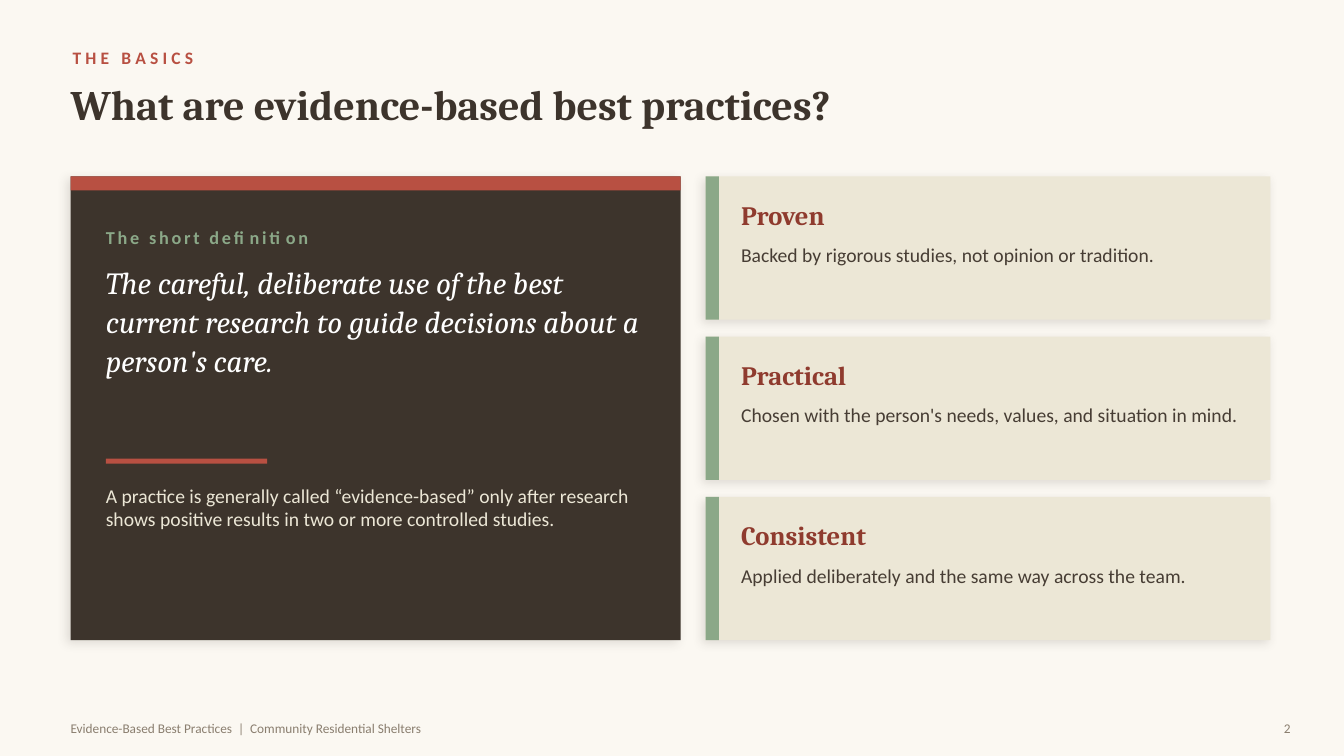
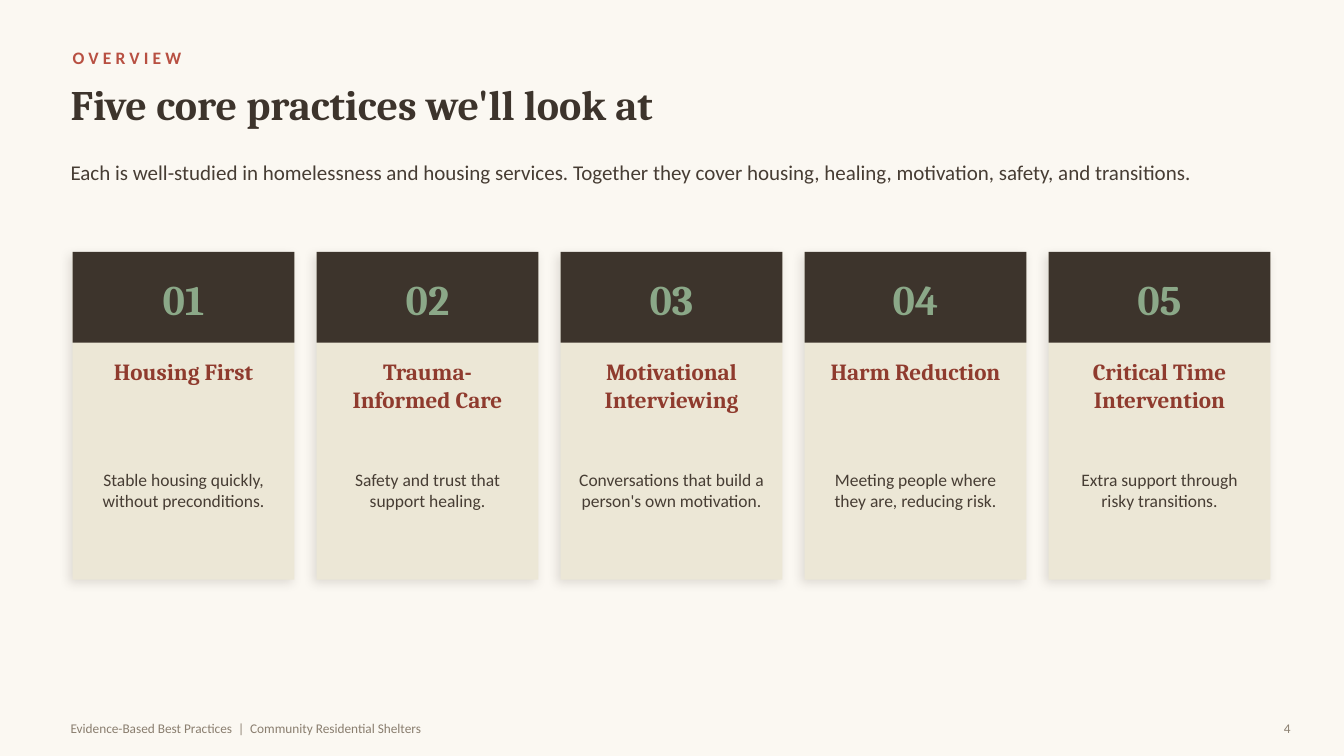
from lxml import etree
from pptx import Presentation
from pptx.dml.color import RGBColor
from pptx.enum.shapes import MSO_SHAPE
from pptx.enum.text import MSO_ANCHOR, MSO_AUTO_SIZE, PP_ALIGN
from pptx.oxml.ns import qn
from pptx.util import Pt

RECTANGLE = MSO_SHAPE.RECTANGLE
TOP, MIDDLE = MSO_ANCHOR.TOP, MSO_ANCHOR.MIDDLE
LEFT, CENTER, RIGHT = PP_ALIGN.LEFT, PP_ALIGN.CENTER, PP_ALIGN.RIGHT
NO_AUTOFIT = MSO_AUTO_SIZE.NONE

EMU_PER_PX = 9144  # 100 px to the inch
TITLE_ONLY = 5

PAPER = RGBColor(0xFB, 0xF8, 0xF2)
SAND = RGBColor(0xEC, 0xE7, 0xD6)
BARK = RGBColor(0x3D, 0x34, 0x2C)
BODY = RGBColor(0x47, 0x3D, 0x34)
CLAY = RGBColor(0xB8, 0x50, 0x42)
BRICK = RGBColor(0x8F, 0x3B, 0x2E)
SAGE = RGBColor(0x8B, 0xA8, 0x88)
MUTED = RGBColor(0x8A, 0x7E, 0x6F)
WHITE = RGBColor(0xFF, 0xFF, 0xFF)

SERIF, SANS = "Cambria", "Calibri"
FOOTER = "Evidence-Based Best Practices  |  Community Residential Shelters"

QUALITIES = [
    ("Proven", "Backed by rigorous studies, not opinion or tradition."),
    ("Practical", "Chosen with the person's needs, values, and situation in mind."),
    ("Consistent", "Applied deliberately and the same way across the team."),
]
PRACTICES = [
    ("Housing First", "Stable housing quickly, without preconditions."),
    ("Trauma-Informed Care", "Safety and trust that support healing."),
    ("Motivational Interviewing", "Conversations that build a person's own motivation."),
    ("Harm Reduction", "Meeting people where they are, reducing risk."),
    ("Critical Time Intervention", "Extra support through risky transitions."),
]


def px(*lengths):
    return [length * EMU_PER_PX for length in lengths]


class Deck:
    """Holds the presentation, its style and the slide being filled."""

    def __init__(self):
        self.prs = Presentation()
        self.prs.slide_width, self.prs.slide_height = px(1333, 750)
        background = self.prs.slide_master.background.fill
        background.solid()
        background.fore_color.rgb = PAPER
        self.slide = None

    def new_slide(self, number, section, title):
        layout = self.prs.slide_layouts[TITLE_ONLY]
        self.slide = self.prs.slides.add_slide(layout)
        heading = self.slide.shapes.title
        heading.left, heading.top, heading.width, heading.height = px(70, 78, 1220, 90)
        self.set_text(heading, title, 30, BARK, SERIF, bold=True)
        self.text((72, 42, 1150, 30), section, 12.5, CLAY,
                  bold=True, anchor=MIDDLE, spacing=3)
        self.text((70, 706, 1050, 32), FOOTER, 9.5, MUTED, anchor=MIDDLE)
        self.text((1220, 706, 60, 32), str(number), 9.5, MUTED,
                  align=RIGHT, anchor=MIDDLE)

    def set_text(self, shape, words, size, color, face=SANS, bold=False, italic=False,
                 align=LEFT, anchor=TOP, spacing=0, leading=None):
        """Fill a shape with one paragraph; spacing is between letters, in points."""
        frame = shape.text_frame
        frame.text = words
        frame.word_wrap = True
        frame.auto_size = NO_AUTOFIT
        frame.vertical_anchor = anchor
        frame.margin_left = frame.margin_right = 0
        frame.margin_top = frame.margin_bottom = 0
        paragraph = frame.paragraphs[0]
        paragraph.alignment = align
        if leading:
            paragraph.line_spacing = leading
        run = paragraph.runs[0]
        font = run.font
        font.name, font.size = face, Pt(size)
        font.bold, font.italic = bold, italic
        font.color.rgb = color
        if spacing:
            run._r.get_or_add_rPr().set("spc", str(spacing * 100))

    def text(self, box, words, size, color, face=SANS, **style):
        self.set_text(self.slide.shapes.add_textbox(*px(*box)),
                      words, size, color, face, **style)

    def block(self, box, color):
        shape = self.slide.shapes.add_shape(RECTANGLE, *px(*box))
        shape.fill.solid()
        shape.fill.fore_color.rgb = color
        shape.line.fill.background()
        shape.shadow.inherit = False
        return shape

    def panel(self, box, color):
        """Draw a block with a soft shadow to the lower left."""
        effects = self.block(box, color)._element.spPr.find(qn("a:effectLst"))
        shadow = etree.SubElement(
            effects, qn("a:outerShdw"), blurRad=str(Pt(7)), dist=str(Pt(3)),
            dir=str(135 * 60000), algn="bl", rotWithShape="0")
        tint = etree.SubElement(shadow, qn("a:srgbClr"), val=str(BARK))
        etree.SubElement(tint, qn("a:alpha"), val="14000")

    def quality_card(self, top, name, detail):
        self.panel((700, top, 560, 142), SAND)
        self.block((700, top, 13, 142), SAGE)
        self.text((735, top + 18, 500, 40), name, 19, BRICK, SERIF,
                  bold=True, anchor=MIDDLE)
        self.text((735, top + 66, 505, 65), detail, 14, BODY)

    def practice_card(self, left, number, name, detail):
        top, width, inset = 250, 220, 18
        inner_left, inner_width = left + inset, width - 2 * inset
        self.panel((left, top, width, 325), SAND)
        self.block((left, top, width, 90), BARK)
        self.text((left, top + 16, width, 60), f"{number:02}", 30, SAGE, SERIF,
                  bold=True, align=CENTER, anchor=MIDDLE)
        self.text((inner_left, top + 105, inner_width, 110), name, 16.5, BRICK, SERIF,
                  bold=True, align=CENTER)
        self.text((inner_left, top + 215, inner_width, 95), detail, 12.5, BODY,
                  align=CENTER)


def add_definition_slide(deck):
    deck.new_slide(2, "THE BASICS", "What are evidence-based best practices?")
    deck.panel((70, 175, 605, 460), BARK)
    deck.block((70, 175, 605, 14), CLAY)
    deck.text((105, 215, 540, 40), "The short definition", 13, SAGE,
              bold=True, anchor=MIDDLE, spacing=2)
    deck.text((105, 260, 540, 170),
              "The careful, deliberate use of the best current research "
              "to guide decisions about a person's care.",
              22, WHITE, SERIF, italic=True, leading=1.05)
    deck.block((105, 455, 160, 5), CLAY)
    deck.text((105, 480, 540, 130),
              "A practice is generally called “evidence-based” only after research "
              "shows positive results in two or more controlled studies.", 14, SAND)
    for row, (name, detail) in enumerate(QUALITIES):
        deck.quality_card(175 + row * 159, name, detail)


def add_overview_slide(deck):
    deck.new_slide(4, "OVERVIEW", "Five core practices we'll look at")
    deck.text((70, 158, 1190, 70),
              "Each is well-studied in homelessness and housing services. Together "
              "they cover housing, healing, motivation, safety, and transitions.",
              15, BODY)
    for column, (name, detail) in enumerate(PRACTICES):
        deck.practice_card(72 + column * 242, column + 1, name, detail)


def main():
    deck = Deck()
    add_definition_slide(deck)
    add_overview_slide(deck)
    deck.prs.save("out.pptx")


if __name__ == "__main__":
    main()
